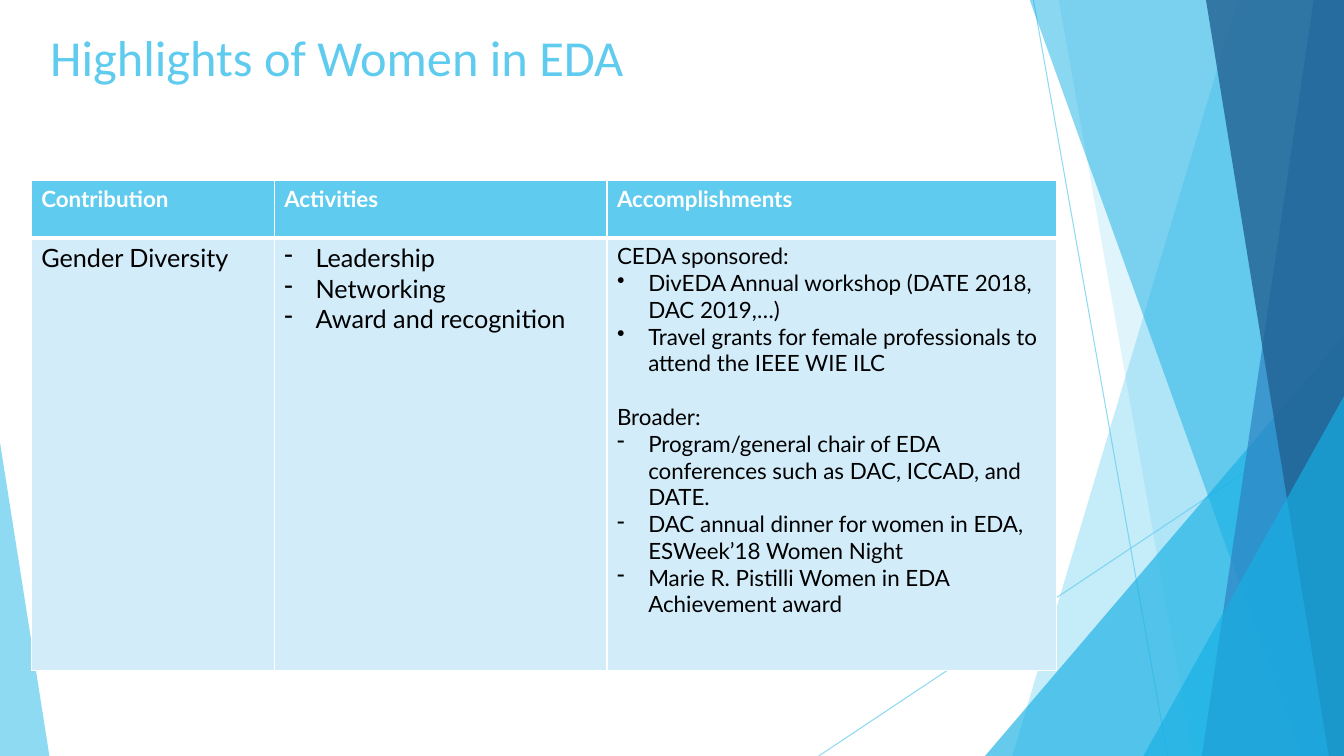
from lxml import etree
from pptx import Presentation
from pptx.dml.color import RGBColor
from pptx.enum.shapes import MSO_CONNECTOR, MSO_SHAPE
from pptx.enum.text import MSO_ANCHOR
from pptx.oxml.ns import qn
from pptx.util import Inches, Pt

STRAIGHT = MSO_CONNECTOR.STRAIGHT
TRIANGLE = MSO_SHAPE.ISOSCELES_TRIANGLE
TOP = MSO_ANCHOR.TOP

SKY = RGBColor(0x5F, 0xCB, 0xEF)
CYAN = RGBColor(0x17, 0xB0, 0xE4)
BLUE = RGBColor(0x2E, 0x83, 0xC3)
NAVY = RGBColor(0x22, 0x62, 0x92)
PALE = RGBColor(0xD2, 0xEC, 0xF9)
WHITE = RGBColor(0xFF, 0xFF, 0xFF)
BLACK = RGBColor(0, 0, 0)

WIDTH, HEIGHT = 13.33, 7.5


class Deck:
    title_font = "Calibri"
    body_font = "Lato"
    indent = Inches(0.31)

    def __init__(self):
        self.prs = Presentation()
        self.prs.slide_width = Inches(WIDTH)
        self.prs.slide_height = Inches(HEIGHT)
        self.s = self.prs.slides.add_slide(self.prs.slide_layouts[6])

    def set_alpha(self, sp, percent):
        for color in sp._element.spPr.iter(qn("a:srgbClr")):
            etree.SubElement(color, qn("a:alpha"), val=str(percent * 1000))

    def paint(self, sp, color, alpha):
        sp.shadow.inherit = False
        sp.fill.solid()
        sp.fill.fore_color.rgb = color
        sp.line.fill.background()
        self.set_alpha(sp, alpha)

    def line(self, x1, y1, x2, y2):
        c = self.s.shapes.add_connector(
            STRAIGHT, Inches(x1), Inches(y1), Inches(x2), Inches(y2))
        c.line.color.rgb = SKY
        c.line.width = Pt(0.75)
        self.set_alpha(c, 70)
        etree.SubElement(c._element.spPr, qn("a:effectLst"))

    def band(self, top_x, bottom_x, color, alpha):
        """Slanted band reaching to the right edge of the slide."""
        points = [(top_x, -0.01), (WIDTH, -0.01), (WIDTH, HEIGHT), (bottom_x, HEIGHT)]
        start, *rest = [(Inches(x), Inches(y)) for x, y in points]
        fb = self.s.shapes.build_freeform(*start, scale=1.0)
        fb.add_line_segments(rest, close=True)
        self.paint(fb.convert_to_shape(), color, alpha)

    def triangle(self, x, y, width, apex, color, alpha):
        """Triangle standing on the bottom edge of the slide."""
        sp = self.s.shapes.add_shape(
            TRIANGLE, Inches(x), Inches(y), Inches(width), Inches(HEIGHT - y))
        sp.adjustments[0] = apex
        self.paint(sp, color, alpha)

    def set_font(self, p, name, size, color, bold=False):
        p.font.name = name
        p.font.size = Pt(size)
        p.font.color.rgb = color
        p.font.bold = bold

    def title(self, text, x, y, w, h):
        tf = self.s.shapes.add_textbox(Inches(x), Inches(y), Inches(w), Inches(h)).text_frame
        tf.word_wrap = True
        tf.vertical_anchor = TOP
        p = tf.paragraphs[0]
        p.text = text
        self.set_font(p, self.title_font, 36, SKY)

    def table(self, x, y, widths, heights):
        table = self.s.shapes.add_table(
            len(heights), len(widths), Inches(x), Inches(y),
            Inches(sum(widths)), Inches(sum(heights))).table
        table.horz_banding = False
        for column, width in zip(table.columns, widths):
            column.width = Inches(width)
        for row, height in zip(table.rows, heights):
            row.height = Inches(height)
        return table

    def cell(self, cell, items, fill, size, color, bold=False, top=1, bottom=1):
        """Each item is (bullet, text, space before in points)."""
        cell.fill.solid()
        cell.fill.fore_color.rgb = fill
        sides = {"lnL": 1, "lnR": 1, "lnT": top, "lnB": bottom}
        tc_pr = cell._tc.get_or_add_tcPr()
        for i, (side, width) in enumerate(sides.items()):
            ln = etree.Element(qn("a:" + side), w=str(Pt(width)))
            solid = etree.SubElement(ln, qn("a:solidFill"))
            etree.SubElement(solid, qn("a:srgbClr"), val=str(WHITE))
            tc_pr.insert(i, ln)
        tf = cell.text_frame
        for i, (bullet, text, before) in enumerate(items):
            p = tf.add_paragraph() if i else tf.paragraphs[0]
            p.text = text
            if bullet:
                p_pr = p._p.get_or_add_pPr()
                p_pr.set("marL", str(self.indent))
                p_pr.set("indent", str(-self.indent))
                etree.SubElement(p_pr, qn("a:buChar"), char=bullet)
            if before:
                p.space_before = Pt(before)
            self.set_font(p, self.body_font, size, color, bold)


def main():
    deck = Deck()

    # Faceted background
    deck.line(10.25, 0, 11.58, HEIGHT)
    deck.line(WIDTH, 4.03, 8.12, HEIGHT)
    deck.band(12.28, 10.04, SKY, 36)
    deck.band(10.5, 11.83, SKY, 20)
    deck.triangle(9.77, 3.33, 3.56, 1, CYAN, 66)
    deck.band(10.21, 12.91, CYAN, 50)
    deck.band(13.03, 11.92, BLUE, 70)
    deck.band(11.96, 13.18, NAVY, 80)
    deck.triangle(11.34, 3.93, 1.99, 1, CYAN, 66)
    deck.triangle(0, 4.39, 0.49, 0, SKY, 70)

    # Title
    deck.title("Highlights of Women in EDA", 0.4, 0.21, 9.4, 1.44)

    # Table: heading, text size and contents of each column
    columns = [
        ("Contribution", 18, [("", "Gender Diversity", 0)]),
        ("Activities", 18, [
            ("-", "Leadership", 0),
            ("-", "Networking", 0),
            ("-", "Award and recognition", 0),
        ]),
        ("Accomplishments", 16, [
            ("", "CEDA sponsored:", 0),
            ("•", "DivEDA Annual workshop (DATE 2018, DAC 2019,…)", 0),
            ("•", "Travel grants for female professionals to attend the IEEE WIE ILC", 0),
            ("", "Broader:", 19.2),
            ("-", "Program/general chair of EDA conferences such as DAC, ICCAD, and DATE.", 0),
            ("-", "DAC annual dinner for women in EDA, ESWeek’18 Women Night", 0),
            ("-", "Marie R. Pistilli Women in EDA Achievement award", 0),
        ]),
    ]
    table = deck.table(0.31, 1.79, [2.41, 3.3, 4.46], [0.57, 4.29])
    for col, (heading, size, items) in enumerate(columns):
        deck.cell(table.cell(0, col), [("", heading, 0)], SKY, 16, WHITE, bold=True, bottom=3)
        deck.cell(table.cell(1, col), items, PALE, size, BLACK, top=3)

    deck.prs.save("out.pptx")


if __name__ == "__main__":
    main()
